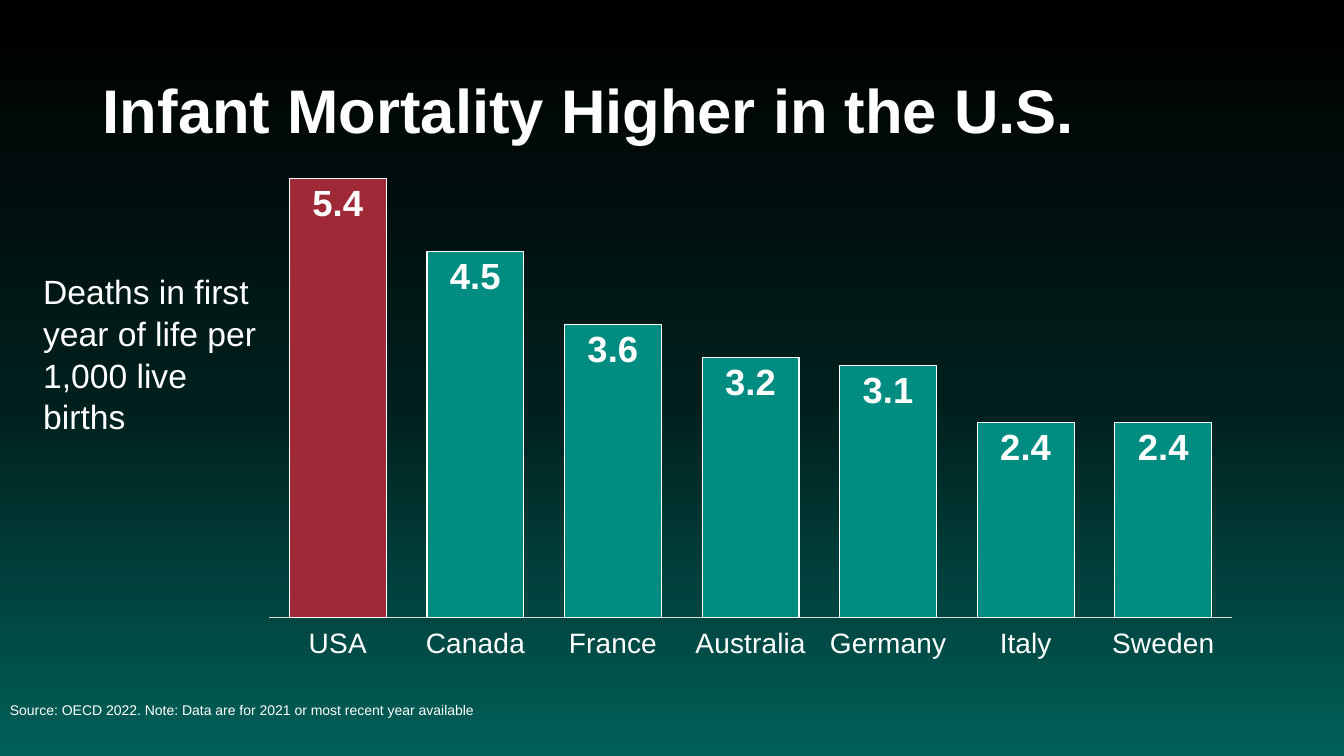
from copy import deepcopy

from pptx import Presentation
from pptx.chart.data import CategoryChartData
from pptx.dml.color import RGBColor
from pptx.enum.chart import XL_CHART_TYPE, XL_LABEL_POSITION, XL_TICK_LABEL_POSITION, XL_TICK_MARK
from pptx.enum.text import MSO_ANCHOR, PP_ALIGN
from pptx.oxml import parse_xml
from pptx.oxml.ns import nsdecls, qn
from pptx.util import Inches, Pt

COLUMNS = XL_CHART_TYPE.COLUMN_CLUSTERED
INSIDE_END = XL_LABEL_POSITION.INSIDE_END
LABELS_LOW = XL_TICK_LABEL_POSITION.LOW
NO_TICK = XL_TICK_MARK.NONE
MIDDLE, TOP = MSO_ANCHOR.MIDDLE, MSO_ANCHOR.TOP
LEFT = PP_ALIGN.LEFT

FONT = "Arial"
WHITE, TEAL, RED, AXIS_GRAY = "FFFFFF", "008C81", "9F2936", "D9D9D9"
BACKDROP = [(0, "000000"), (0.52, "001E1C"), (1, "006059")]
DEATH_RATES = {"USA": 5.4, "Canada": 4.5, "France": 3.6, "Australia": 3.2,
               "Germany": 3.1, "Italy": 2.4, "Sweden": 2.4}


def color(hex_code):
    return RGBColor.from_string(hex_code)


def style_font(font, size, bold=False):
    font.name, font.size, font.bold = FONT, Pt(size), bold
    font.color.rgb = color(WHITE)


def style_line(line, hex_code):
    line.color.rgb = color(hex_code)
    line.width = Pt(0.75)


def fill_text(shape, text, size, bold=False, anchor=TOP, spacing=1.0):
    frame = shape.text_frame
    frame.word_wrap = True
    frame.vertical_anchor = anchor
    paragraph = frame.paragraphs[0]
    paragraph.alignment = LEFT
    paragraph.line_spacing = spacing
    run = paragraph.add_run()
    run.text = text
    style_font(run.font, size, bold)


def paint_background(slide):
    fill = slide.background.fill
    fill.gradient()
    fill.gradient_angle = 270
    stop_list = slide.element.find(".//" + qn("a:gsLst"))
    stop_list.insert(1, deepcopy(stop_list[0]))
    for stop, (position, hex_code) in zip(fill.gradient_stops, BACKDROP):
        stop.position = position
        stop.color.rgb = color(hex_code)


def add_title(slide, left, top, width, height):
    title = slide.shapes.title
    title.left, title.top = Inches(left), Inches(top)
    title.width, title.height = Inches(width), Inches(height)
    fill_text(title, "Infant Mortality Higher in the U.S.", 44, True, MIDDLE, 0.9)


def add_note(slide, box, text, size, **layout):
    note = slide.shapes.add_textbox(*map(Inches, box))
    fill_text(note, text, size, **layout)


def add_mortality_chart(slide, left, top, width, height):
    data = CategoryChartData(number_format="#,##0.0")
    data.categories = list(DEATH_RATES)
    data.add_series("Series 1", list(DEATH_RATES.values()))
    chart = slide.shapes.add_chart(
        COLUMNS, Inches(left), Inches(top), Inches(width), Inches(height), data).chart
    chart.has_legend = chart.has_title = False
    style_font(chart.font, 20)

    # Axes
    countries, rates = chart.category_axis, chart.value_axis
    countries.major_tick_mark = NO_TICK
    countries.tick_label_position = LABELS_LOW
    style_font(countries.tick_labels.font, 20)
    style_line(countries.format.line, AXIS_GRAY)
    rates.minimum_scale, rates.maximum_scale, rates.major_unit = 0, 5.5, 1
    rates.has_major_gridlines = False
    rates.visible = False

    # Columns, with the USA picked out
    plot = chart.plots[0]
    plot.gap_width, plot.overlap = 42, -27
    plot.vary_by_categories = False
    deaths = plot.series[0]
    for column, hex_code in ((deaths, TEAL), (deaths.points[0], RED)):
        column.format.fill.solid()
        column.format.fill.fore_color.rgb = color(hex_code)
        style_line(column.format.line, WHITE)

    # Values inside the columns
    labels = deaths.data_labels
    labels.show_value = True
    labels.position = INSIDE_END
    labels.number_format, labels.number_format_is_linked = "#,##0.0", False
    style_font(labels.font, 26, True)

    # Plot area as fractions of the chart
    sides = {"x": 0.02, "y": 0.02, "w": 0.96, "h": 0.89}
    edges = "".join(f'<c:{side}Mode val="edge"/>' for side in "xy")
    sizes = "".join(f'<c:{side} val="{share}"/>' for side, share in sides.items())
    layout = parse_xml(
        f'<c:layout {nsdecls("c")}><c:manualLayout><c:layoutTarget val="inner"/>'
        f"{edges}{sizes}</c:manualLayout></c:layout>")
    plot_area = chart.element.find(".//" + qn("c:plotArea"))
    for old_layout in plot_area.findall(qn("c:layout")):
        plot_area.remove(old_layout)
    plot_area.insert(0, layout)


def main():
    deck = Presentation()
    deck.slide_width, deck.slide_height = Inches(13.33), Inches(7.5)
    slide = deck.slides.add_slide(deck.slide_layouts[5])
    paint_background(slide)
    add_title(slide, 0.92, 0.4, 11.5, 1.45)
    add_note(slide, (0, 6.58, 9, 0.92),
             "Source: OECD 2022. Note: Data are for 2021 or most recent year available",
             10, anchor=MIDDLE)
    add_mortality_chart(slide, 2.47, 1.59, 9.95, 4.99)
    add_note(slide, (0.33, 2.62, 2.35, 1.72),
             "Deaths in first year of life per 1,000 live births", 24, spacing=1.04)
    deck.save("out.pptx")


if __name__ == "__main__":
    main()
